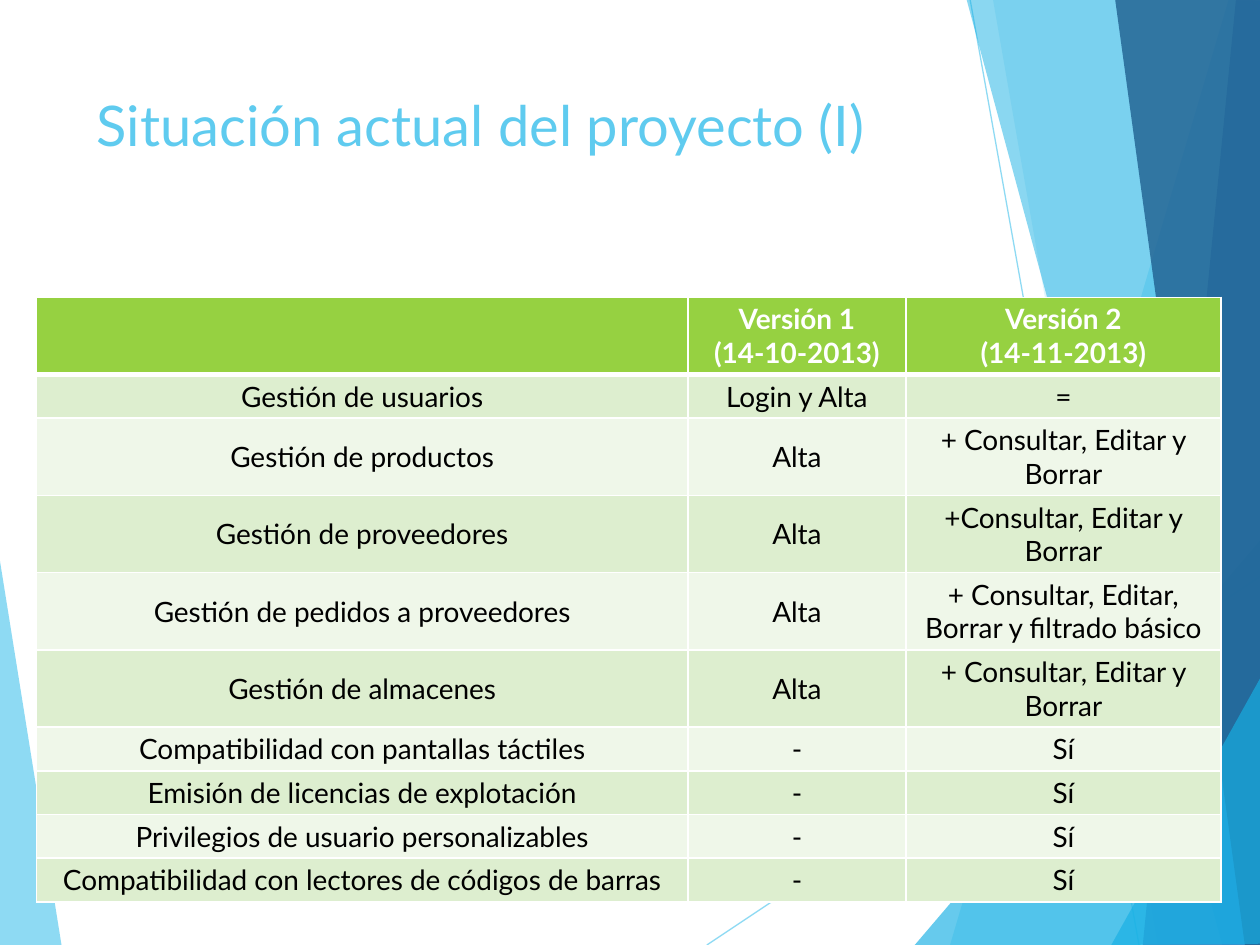
from pptx import Presentation
from pptx.dml.color import RGBColor
from pptx.enum.shapes import MSO_CONNECTOR
from pptx.enum.text import MSO_ANCHOR, PP_ALIGN
from pptx.oxml.ns import qn
from pptx.util import Inches, Pt
from lxml.etree import SubElement

COLORS = {
    "sky": "5FCBEF", "cyan": "17B0E4", "blue": "2E83C3", "navy": "226292",
    "green": "96D141", "band": "DDEECF", "pale": "EFF7E9",
    "white": "FFFFFF", "black": "000000",
}

LEFT_FACET = ("sky", 70, [(-0.01, 4.39), (0.49, 7.51), (-0.01, 7.5)])
LINES = [((5.61, 7.5), (10.01, 4.57)), ((7.7, 0), (9.04, 7.5))]
RIGHT_FACETS = [
    ("sky", 36, [(9.75, 0), (7.54, 7.5), (10.02, 7.51), (10.01, 0.01)]),
    ("sky", 20, [(7.88, -0.01), (9.19, 7.5), (10.01, 7.5), (10.01, -0.01)]),
    ("cyan", 66, [(7.26, 7.5), (10, 4.29), (10.01, 7.5)]),
    ("cyan", 50, [(7.67, -0.01), (9.7, 7.5), (10.01, 7.49), (10.01, -0.01)]),
    ("blue", 70, [(9.81, -0.01), (9.07, 7.5), (10.01, 7.5), (10, -0.01)]),
    ("navy", 82, [(8.85, -0.01), (9.88, 7.5), (10.02, 7.5), (10, -0.01)]),
    ("cyan", 66, [(8.82, 7.5), (10.02, 5.35), (10.02, 7.49)]),
]

COLUMN_WIDTHS = [5.17, 1.73, 2.5]
SINGLE, DOUBLE = 0.34, 0.61
ROWS = [
    (DOUBLE, "", "Versión 1\n(14-10-2013)", "Versión 2\n(14-11-2013)"),
    (SINGLE, "Gestión de usuarios", "Login y Alta", "="),
    (DOUBLE, "Gestión de productos", "Alta", "+ Consultar, Editar y Borrar"),
    (DOUBLE, "Gestión de proveedores", "Alta", "+Consultar, Editar y Borrar"),
    (DOUBLE, "Gestión de pedidos a proveedores", "Alta",
     "+ Consultar, Editar, Borrar y filtrado básico"),
    (DOUBLE, "Gestión de almacenes", "Alta", "+ Consultar, Editar y Borrar"),
    (SINGLE, "Compatibilidad con pantallas táctiles", "-", "Sí"),
    (SINGLE, "Emisión de licencias de explotación", "-", "Sí"),
    (SINGLE, "Privilegios de usuario personalizables", "-", "Sí"),
    (SINGLE, "Compatibilidad con lectores de códigos de barras", "-", "Sí"),
]


class Deck:
    """Hold the style and the current slide, and draw each kind of element."""

    def __init__(self, width, height):
        self.prs = Presentation()
        self.prs.slide_width, self.prs.slide_height = Inches(width), Inches(height)
        self.s = self.prs.slides.add_slide(self.prs.slide_layouts[6])
        self.font = "Lato"

    def paint(self, fill, color, alpha=100):
        fill.solid()
        fill.fore_color.rgb = RGBColor.from_string(COLORS[color])
        if alpha < 100:
            clr = fill._xPr.find(".//" + qn("a:srgbClr"))
            SubElement(clr, qn("a:alpha"), val=str(alpha * 1000))

    def facet(self, color, alpha, points):
        (x, y), *rest = [(Inches(px), Inches(py)) for px, py in points]
        builder = self.s.shapes.build_freeform(x, y)
        builder.add_line_segments(rest, close=True)
        sp = builder.convert_to_shape()
        sp.shadow.inherit = False
        sp.line.fill.background()
        self.paint(sp.fill, color, alpha)

    def line(self, start, end):
        ends = [Inches(v) for v in (*start, *end)]
        cxn = self.s.shapes.add_connector(MSO_CONNECTOR.STRAIGHT, *ends)
        cxn.line.width = Pt(0.75)
        self.paint(cxn.line.fill, "sky", 70)
        SubElement(cxn._element.spPr, qn("a:effectLst"))

    def text(self, tf, text, size, color, bold=False, align=PP_ALIGN.LEFT):
        style = {"name": self.font, "size": Pt(size), "bold": bold}
        tf.text = text
        for p in tf.paragraphs:
            p.alignment = align
            for r in p.runs:
                for key, value in style.items():
                    setattr(r.font, key, value)
                r.font.color.rgb = RGBColor.from_string(COLORS[color])

    def title(self, text, *box):
        tf = self.s.shapes.add_textbox(*[Inches(v) for v in box]).text_frame
        tf.word_wrap = True
        self.text(tf, text, 32, "sky")

    def borders(self, cell, **widths):
        tc_pr = cell._tc.get_or_add_tcPr()
        for side in "LRTB":
            ln = SubElement(tc_pr, qn(f"a:ln{side}"), w=str(Pt(widths.get(side, 1))))
            fill = SubElement(ln, qn("a:solidFill"))
            SubElement(fill, qn("a:srgbClr"), val=COLORS["white"])

    def table(self, left, top, widths, rows):
        heights = [row[0] for row in rows]
        box = [Inches(v) for v in (left, top, sum(widths), sum(heights))]
        table = self.s.shapes.add_table(len(rows), len(widths), *box).table
        for column, width in zip(table.columns, widths):
            column.width = Inches(width)
        for i, (height, *texts) in enumerate(rows):
            table.rows[i].height = Inches(height)
            header = i == 0
            fill = "green" if header else ("pale", "band")[i % 2]
            for j, text in enumerate(texts):
                self.cell(table.cell(i, j), text, fill, header, first=i == 1)

    def cell(self, cell, text, fill, header, first):
        style = {
            "margin_left": Inches(0.07), "margin_right": Inches(0.07),
            "margin_top": Inches(0.04), "margin_bottom": Inches(0.04),
            "vertical_anchor": MSO_ANCHOR.TOP if header else MSO_ANCHOR.MIDDLE,
        }
        for key, value in style.items():
            setattr(cell, key, value)
        self.borders(cell, B=3 if header else 1, T=3 if first else 1)
        self.paint(cell.fill, fill)
        color = "white" if header else "black"
        self.text(cell.text_frame, text, 16, color, header, PP_ALIGN.CENTER)


def main():
    deck = Deck(10, 7.5)
    deck.facet(*LEFT_FACET)
    for start, end in LINES:
        deck.line(start, end)
    for facet in RIGHT_FACETS:
        deck.facet(*facet)
    deck.title("Situación actual del proyecto (I)", 0.67, 0.67, 6.94, 1.44)
    deck.table(0.29, 2.36, COLUMN_WIDTHS, ROWS)
    deck.prs.save("out.pptx")


if __name__ == "__main__":
    main()
